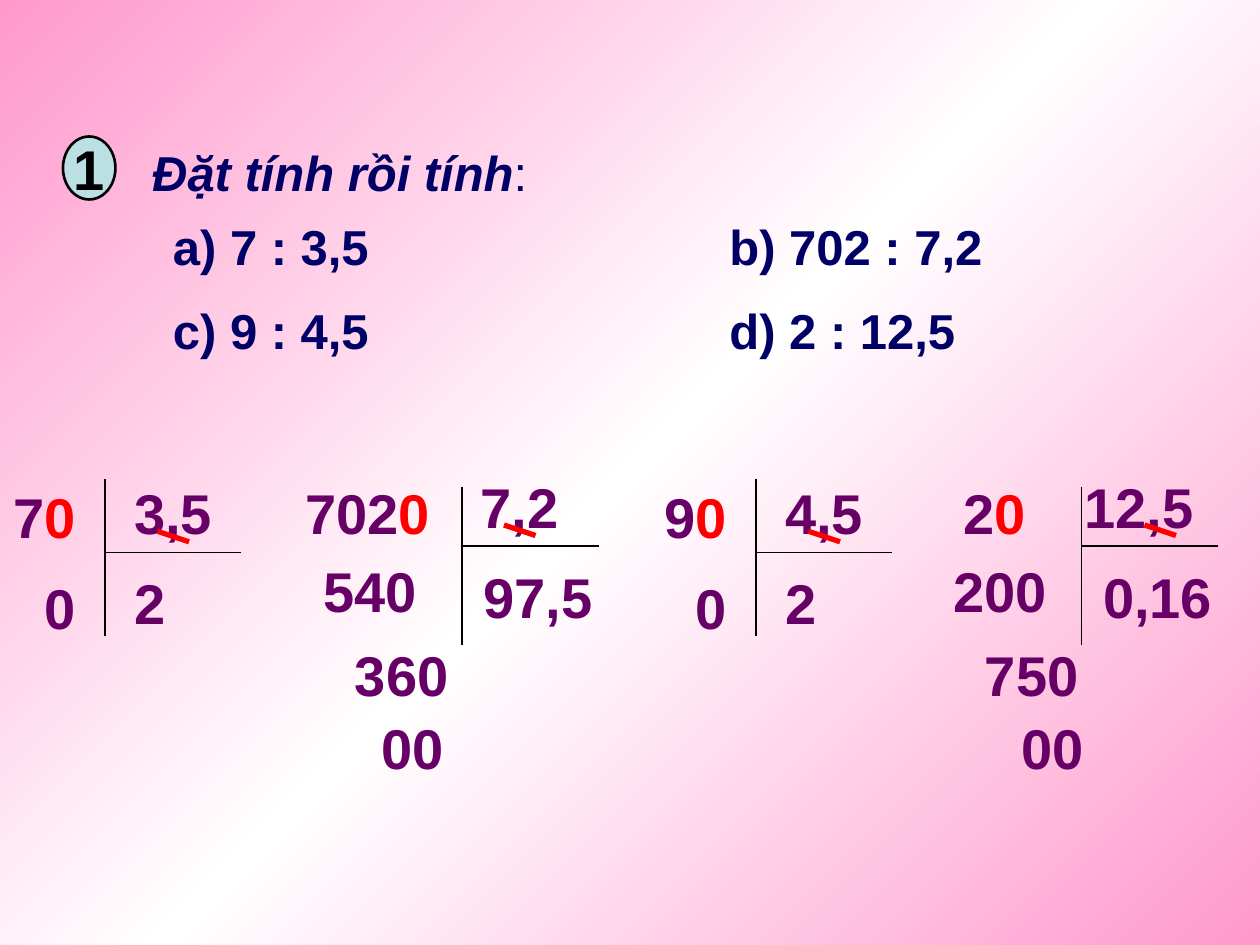
from copy import deepcopy
from dataclasses import dataclass

from lxml import etree
from pptx import Presentation
from pptx.dml.color import RGBColor
from pptx.enum import shapes, text
from pptx.oxml.ns import qn
from pptx.util import Pt


@dataclass(frozen=True)
class Theme:
    font: str = "Arial"
    navy: str = "000066"
    purple: str = "660066"
    red: str = "FF0000"
    black: str = "000000"
    badge: str = "BBE0E3"
    pink: str = "FF99CC"
    white: str = "FFFFFF"
    body: float = 28
    digits: float = 32


T = Theme()


@dataclass(frozen=True)
class Run:
    text: str
    color: str = T.purple
    size: float = T.digits
    bold: bool = True
    italic: bool = False


@dataclass(frozen=True)
class Label:
    """Centred text, its left edge measured from the vertical bar."""
    dx: float
    y: float
    w: float
    text: str
    added_zero: str = ""


@dataclass(frozen=True)
class Division:
    bar_x: float
    bar_y: float
    rule_y: float
    slash_dx: float
    slash_y: float
    labels: tuple[Label, ...]


def write(sp, runs: list[Run], align=None, half_line_before: bool = True) -> None:
    tf = sp.text_frame
    p = tf.paragraphs[0]
    p.alignment = align
    if half_line_before:
        before = etree.SubElement(p._p.get_or_add_pPr(), qn("a:spcBef"))
        etree.SubElement(before, qn("a:spcPct"), val="50000")
    for run in runs:
        r = p.add_run()
        r.text = run.text
        fmt = {"name": T.font, "size": Pt(run.size), "bold": run.bold, "italic": run.italic}
        for key, value in fmt.items():
            setattr(r.font, key, value)
        r.font.color.rgb = RGBColor.from_string(run.color)


def add_text(s, x: float, y: float, w: float, h: float, runs: list[Run], align=None) -> None:
    sp = s.shapes.add_textbox(Pt(x), Pt(y), Pt(w), Pt(h))
    sp.text_frame.word_wrap = True
    write(sp, runs, align)


def add_line(s, x1: float, y1: float, x2: float, y2: float,
             color: str = T.black, width: float = 0.75) -> None:
    line = s.shapes.add_connector(shapes.MSO_CONNECTOR.STRAIGHT, Pt(x1), Pt(y1), Pt(x2), Pt(y2))
    line.line.color.rgb = RGBColor.from_string(color)
    line.line.width = Pt(width)
    etree.SubElement(line._element.spPr, qn("a:effectLst"))


def add_division(s, d: Division) -> None:
    add_line(s, d.bar_x, d.bar_y, d.bar_x, d.bar_y + 90)
    add_line(s, d.bar_x, d.rule_y, d.bar_x + 78, d.rule_y)
    for label in d.labels:
        runs = [Run(label.text)]
        if label.added_zero:
            runs.append(Run(label.added_zero, T.red))
        add_text(s, d.bar_x + label.dx, label.y, label.w, 45.6, runs, text.PP_ALIGN.CENTER)
    # Stroke that crosses out the decimal comma
    x = d.bar_x + d.slash_dx
    add_line(s, x, d.slash_y, x + 18, d.slash_y + 6, T.red, 3)


def short_division(bar_x: float, dividend: str, divisor: str) -> Division:
    return Division(bar_x, 273.6, 315.6, 30, 303.6, (
        Label(-66, 272.4, 72, dividend, "0 "),
        Label(-6, 270, 90, divisor),
        Label(-42, 324, 42, "0 "),
        Label(6, 321.6, 48, "2 "),
    ))


def long_division(bar_x: float, slash_dx: float, dividend: Label, divisor: str,
                  quotient: str, steps: list[tuple[float, str]]) -> Division:
    step_tops = (314.4, 362.4, 404.4)
    return Division(bar_x, 278.4, 312, slash_dx, 300, (
        dividend,
        Label(-12, 266.4, 90, divisor),
        Label(-6, 318, 108, quotient),
        *(Label(dx, y, 84, value) for y, (dx, value) in zip(step_tops, steps)),
    ))


def paint_background(s) -> None:
    fill = s.background.fill
    fill.gradient()
    fill.gradient_angle = 315
    stops = s._element.find(".//" + qn("a:gsLst"))
    stops.insert(1, deepcopy(stops[0]))
    for stop, position, color in zip(fill.gradient_stops, (0, 0.5, 1), (T.pink, T.white, T.pink)):
        stop.position = position
        stop.color.rgb = RGBColor.from_string(color)


def main() -> None:
    prs = Presentation()
    prs.slide_width, prs.slide_height = Pt(720), Pt(540)
    s = prs.slides.add_slide(prs.slide_layouts[5])
    paint_background(s)

    # Exercise number
    badge = s.shapes.add_shape(shapes.MSO_SHAPE.OVAL, Pt(36), Pt(78), Pt(30), Pt(36))
    badge.shadow.inherit = False
    badge.fill.solid()
    badge.fill.fore_color.rgb = RGBColor.from_string(T.badge)
    badge.line.color.rgb = RGBColor.from_string(T.black)
    badge.line.width = Pt(1.5)
    badge.text_frame.word_wrap = False
    badge.text_frame.vertical_anchor = text.MSO_ANCHOR.MIDDLE
    write(badge, [Run("1", T.black)], text.PP_ALIGN.CENTER, half_line_before=False)

    # Title
    title = s.shapes.title
    for key, value in {"left": 72, "top": 78, "width": 372, "height": 41}.items():
        setattr(title, key, Pt(value))
    title.text_frame.vertical_anchor = text.MSO_ANCHOR.TOP
    title.text_frame.auto_size = text.MSO_AUTO_SIZE.NONE
    write(title, [Run(" ", T.navy, T.body, False),
                  Run("Đặt tính rồi tính", T.navy, T.body, True, True),
                  Run(":", T.navy, T.body, False)], text.PP_ALIGN.LEFT)

    # Questions, two by two
    questions = ((" a) 7 : 3,5", " b) 702 : 7,2"), (" c) 9 : 4,5", " d) 2 : 12,5"))
    for row, pair in enumerate(questions):
        for x, w, question in zip((84, 402), (144, 198), pair):
            add_text(s, x, 120 + 48 * row, w, 41, [Run(question, T.navy, T.body)])

    # Worked divisions
    divisions = (
        short_division(60, "7", "3,5"),
        long_division(264, 24, Label(-102, 270, 96, "702", "0"), "7,2", "97,5 ",
                      [(-90, "540 "), (-72, "360 "), (-66, "00 ")]),
        short_division(432, "9", "4,5"),
        long_division(618, 36, Label(-90, 270, 72, " 2", "0"), "12,5", "0,16 ",
                      [(-84, "200 "), (-66, "750 "), (-54, "00 ")]),
    )
    for division in divisions:
        add_division(s, division)

    prs.save("out.pptx")


if __name__ == "__main__":
    main()
